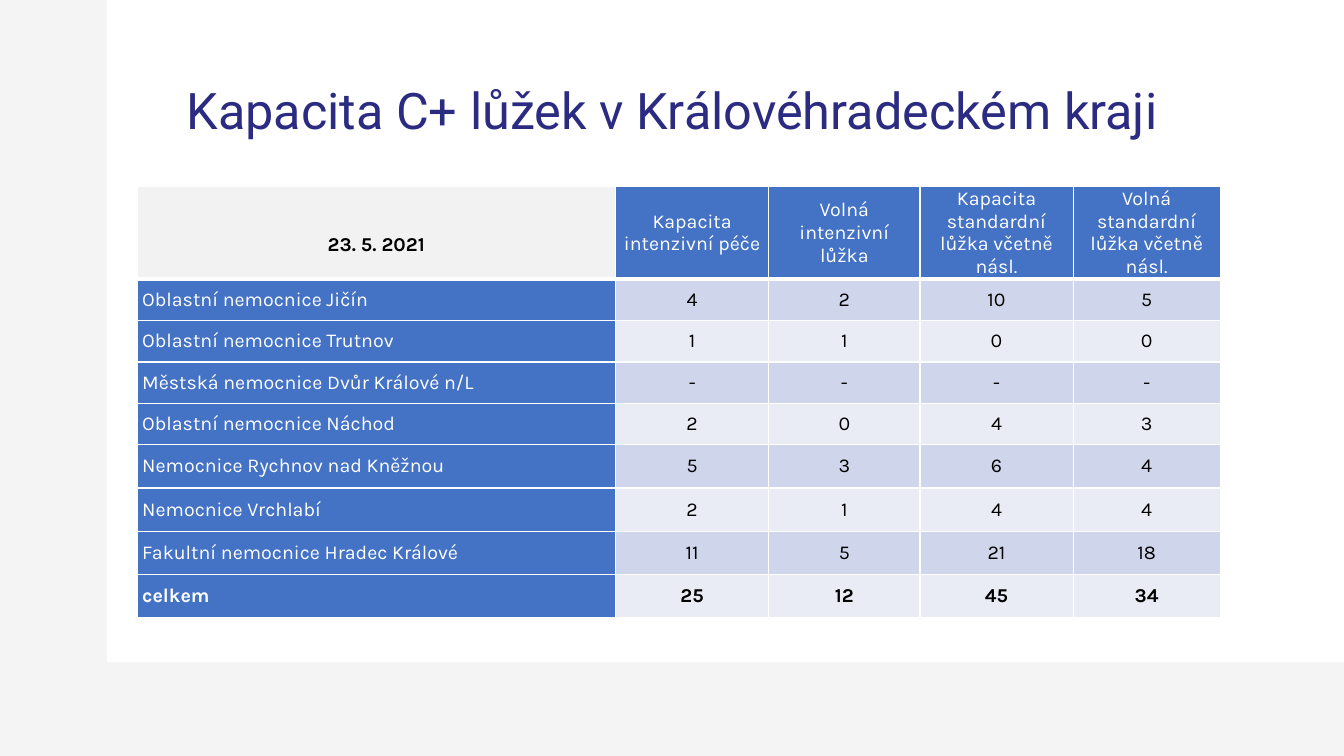
from dataclasses import dataclass

import pptx
import pptx.dml.color
import pptx.enum.shapes
import pptx.enum.text
import pptx.oxml
import pptx.oxml.ns
import pptx.util

RGBColor = pptx.dml.color.RGBColor
PP_ALIGN = pptx.enum.text.PP_ALIGN
MIDDLE = pptx.enum.text.MSO_ANCHOR.MIDDLE

WHITE = RGBColor(0xFF, 0xFF, 0xFF)
BLACK = RGBColor(0x00, 0x00, 0x00)
BACKDROP = RGBColor(0xF4, 0xF4, 0xF4)
DATE_FILL = RGBColor(0xF2, 0xF2, 0xF2)
NAVY = RGBColor(0x2B, 0x2B, 0x82)
BLUE = RGBColor(0x44, 0x72, 0xC4)
BANDS = (RGBColor(0xCF, 0xD5, 0xEA), RGBColor(0xE9, 0xEB, 0xF5))

SLIDE_W = pptx.util.Inches(13.33)
SLIDE_H = pptx.util.Inches(7.5)
CELL_SIDE = pptx.util.Inches(0.05)
DATE_DROP = pptx.util.Inches(0.23)


@dataclass(frozen=True)
class Area:
    left: float
    top: float
    width: float
    height: float

    def emu(self) -> tuple[int, int, int, int]:
        return across(self.left), down(self.top), across(self.width), down(self.height)


@dataclass(frozen=True)
class Column:
    heading: str
    width: float


@dataclass(frozen=True)
class Hospital:
    name: str
    beds: tuple[str, ...]
    height: float
    bold: bool = False


HEADER_HEIGHT = 12.27
PANEL = Area(7.95, 0, 92.05, 87.6)
TITLE = Area(6.9, 5.33, 86.25, 19.33)
COLUMNS = (
    Column("23. 5. 2021", 35.6),
    Column("Kapacita intenzivní péče", 11.4),
    Column("Volná intenzivní lůžka", 11.25),
    Column("Kapacita standardní lůžka včetně násl.", 11.4),
    Column("Volná standardní lůžka včetně násl.", 10.95),
)
HOSPITALS = (
    Hospital("Oblastní nemocnice Jičín", ("4", "2", "10", "5"), 5.47),
    Hospital("Oblastní nemocnice Trutnov", ("1", "1", "0", "0"), 5.47),
    Hospital("Městská nemocnice Dvůr Králové n/L", ("-", "-", "-", "-"), 5.47),
    Hospital("Oblastní nemocnice Náchod", ("2", "0", "4", "3"), 5.47),
    Hospital("Nemocnice Rychnov nad Kněžnou", ("5", "3", "6", "4"), 5.73),
    Hospital("Nemocnice Vrchlabí", ("2", "1", "4", "4"), 5.73),
    Hospital("Fakultní nemocnice Hradec Králové", ("11", "5", "21", "18"), 5.73),
    Hospital("celkem", ("25", "12", "45", "34"), 5.73, bold=True),
)
TABLE = Area(
    10.2,
    24.67,
    sum(c.width for c in COLUMNS),
    HEADER_HEIGHT + sum(h.height for h in HOSPITALS),
)


def across(percent: float) -> int:
    return round(SLIDE_W * percent / 100)


def down(percent: float) -> int:
    return round(SLIDE_H * percent / 100)


def write(tf, text: str, *, font: str = "Karla", size: float = 14, color: RGBColor = BLACK,
          bold: bool = False, align: PP_ALIGN = PP_ALIGN.CENTER, spacing: float = 1.0) -> None:
    p = tf.paragraphs[0]
    p.alignment = align
    p.line_spacing = spacing
    r = p.add_run()
    r.text = text
    r.font.name = font
    r.font.size = pptx.util.Pt(size)
    r.font.bold = bold
    r.font.color.rgb = color


def add_borders(cell, bottom: float, top: float) -> None:
    tc_pr = cell._tc.get_or_add_tcPr()
    widths = {"lnL": 1, "lnR": 1, "lnT": top, "lnB": bottom}
    for i, (side, width) in enumerate(widths.items()):
        tc_pr.insert(i, pptx.oxml.parse_xml(
            f'<a:{side} {pptx.oxml.ns.nsdecls("a")} w="{pptx.util.Pt(width)}">'
            f'<a:solidFill><a:srgbClr val="{WHITE}"/></a:solidFill></a:{side}>'
        ))


def fill_cell(cell, text: str, *, fill: RGBColor, color: RGBColor, bold: bool = False,
              align: PP_ALIGN = PP_ALIGN.CENTER, bottom: float = 1, top: float = 1) -> None:
    cell.margin_left = cell.margin_right = CELL_SIDE
    cell.margin_top = cell.margin_bottom = 0
    cell.vertical_anchor = MIDDLE
    cell.fill.solid()
    cell.fill.fore_color.rgb = fill
    add_borders(cell, bottom, top)
    write(cell.text_frame, text, color=color, bold=bold, align=align)


def add_panel(s) -> None:
    sp = s.shapes.add_shape(pptx.enum.shapes.MSO_SHAPE.RECTANGLE, *PANEL.emu())
    sp.shadow.inherit = False
    sp.fill.solid()
    sp.fill.fore_color.rgb = WHITE
    sp.line.fill.background()
    s.shapes.title.element.addprevious(sp.element)


def add_title(s) -> None:
    sp = s.shapes.title
    sp.left, sp.top, sp.width, sp.height = TITLE.emu()
    tf = sp.text_frame
    tf.word_wrap = True
    tf.vertical_anchor = MIDDLE
    write(tf, "Kapacita C+ lůžek v Královéhradeckém kraji",
          font="Roboto", size=36, color=NAVY, spacing=0.9)


def add_beds_table(s) -> None:
    table = s.shapes.add_table(len(HOSPITALS) + 1, len(COLUMNS), *TABLE.emu()).table
    table.horz_banding = False
    table.rows[0].height = down(HEADER_HEIGHT)
    for j, column in enumerate(COLUMNS):
        table.columns[j].width = across(column.width)
        is_date = j == 0
        fill_cell(table.cell(0, j), column.heading, fill=DATE_FILL if is_date else BLUE,
                  color=BLACK if is_date else WHITE, bold=is_date, bottom=3)
    table.cell(0, 0).margin_top = DATE_DROP
    for i, hospital in enumerate(HOSPITALS, start=1):
        table.rows[i].height = down(hospital.height)
        top = 3 if i == 1 else 1
        fill_cell(table.cell(i, 0), hospital.name, fill=BLUE, color=WHITE,
                  bold=hospital.bold, align=PP_ALIGN.LEFT, top=top)
        for j, beds in enumerate(hospital.beds, start=1):
            fill_cell(table.cell(i, j), beds, fill=BANDS[(i - 1) % 2], color=BLACK,
                      bold=hospital.bold, top=top)


def main() -> None:
    prs = pptx.Presentation()
    prs.slide_width, prs.slide_height = SLIDE_W, SLIDE_H
    s = prs.slides.add_slide(prs.slide_layouts[5])
    s.background.fill.solid()
    s.background.fill.fore_color.rgb = BACKDROP
    add_panel(s)
    add_title(s)
    add_beds_table(s)
    prs.save("out.pptx")


if __name__ == "__main__":
    main()
